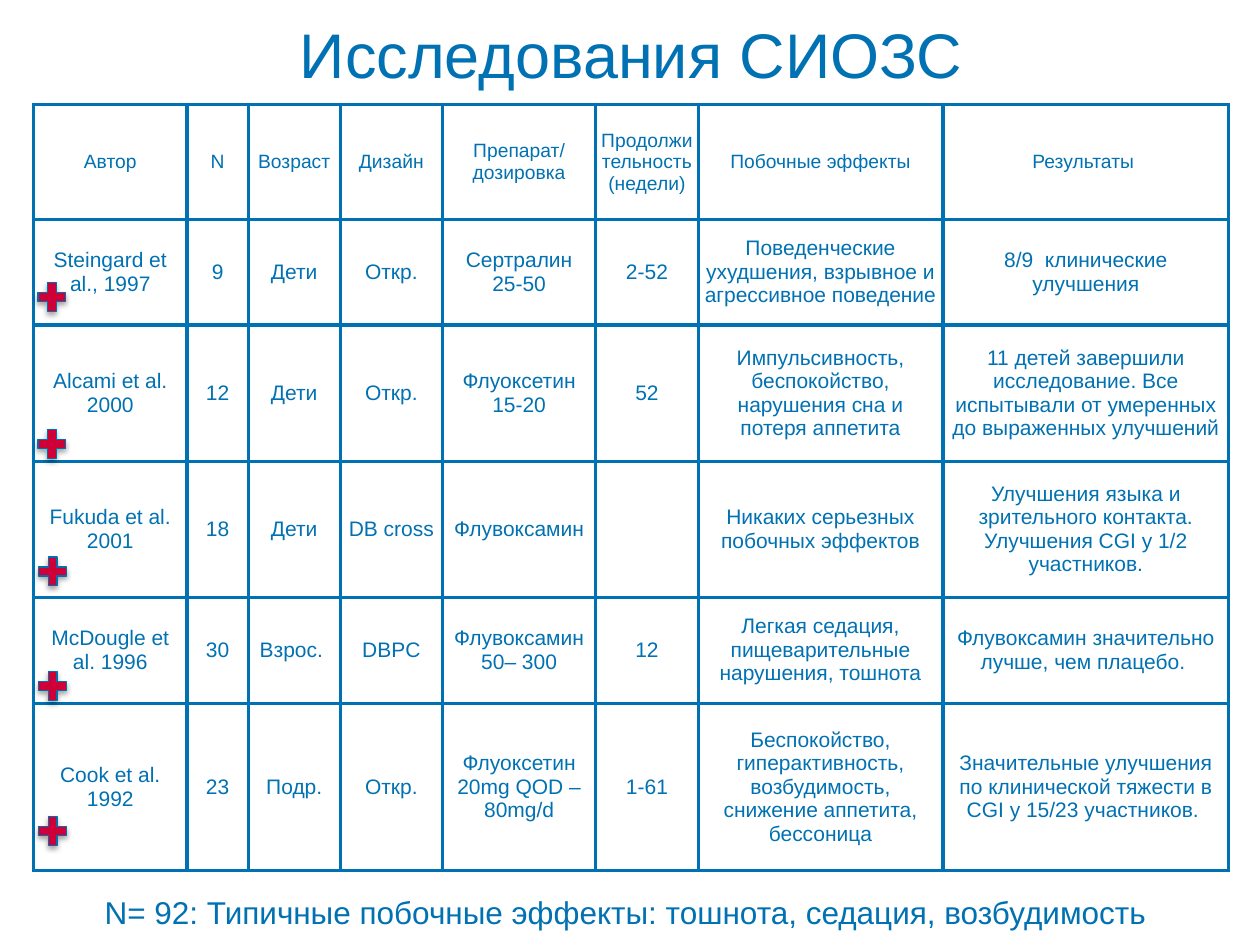
from lxml.etree import SubElement
from pptx import Presentation
from pptx.dml.color import RGBColor
from pptx.enum.shapes import MSO_SHAPE
from pptx.enum.text import MSO_ANCHOR, MSO_AUTO_SIZE, PP_ALIGN
from pptx.oxml import parse_xml
from pptx.oxml.ns import nsdecls, qn
from pptx.util import Pt

COLORS = {"blue": "0071B2", "outline": "006FAE", "red": "CE0037", "shadow": "000000"}
FONT = "Arial"

TITLE = "Исследования СИОЗС"
SUMMARY = "N= 92: Типичные побочные эффекты: тошнота, седация, возбудимость"
STUDIES = [
    ("Автор", "N", "Возраст", "Дизайн", "Препарат/\nдозировка",
     "Продолжительность\n(недели)", "Побочные эффекты", "Результаты "),
    ("Steingard et al., 1997", "9", "Дети", "Откр.", "Сертралин\n25-50", "2-52",
     "Поведенческие ухудшения, взрывное и агрессивное поведение",
     "8/9  клинические улучшения"),
    ("Alcami et al.\n2000", "12", "Дети", "Откр.", "Флуоксетин\n15-20", "52",
     "Импульсивность, беспокойство, нарушения сна и потеря аппетита",
     "11 детей завершили исследование. Все испытывали от умеренных "
     "до выраженных улучшений"),
    ("Fukuda et al. 2001", "18", "Дети", "DB cross", "Флувоксамин", "",
     "Никаких серьезных побочных эффектов",
     "Улучшения языка и зрительного контакта. Улучшения CGI у 1/2 участников."),
    ("McDougle et al. 1996", "30", "Взрос. ", "DBPC", "Флувоксамин\n50– 300", "12",
     "Легкая седация, пищеварительные нарушения, тошнота",
     "Флувоксамин значительно лучше, чем плацебо. "),
    ("Cook et al. 1992", "23", "Подр.", "Откр.", "Флуоксетин 20mg QOD – 80mg/d",
     "1-61",
     "Беспокойство, гиперактивность, возбудимость, снижение аппетита, бессоница",
     "Значительные улучшения по клинической тяжести в CGI у 15/23 участников. "),
]
COLUMN_WIDTHS = [87.7, 35, 52.6, 58.4, 87.7, 58.4, 140, 163.3]
ROW_HEIGHTS = [65.4, 60.5, 77.8, 77.8, 60.5, 95.8]
PLUS_POSITIONS = [(18.9, 158.5), (18.9, 242.6), (19.3, 315.4), (19.3, 380.9), (19.3, 463.7)]


def color(name):
    return RGBColor.from_string(COLORS[name])


def write(frame, text, size, align):
    for index, line in enumerate(text.split("\n")):
        paragraph = frame.add_paragraph() if index else frame.paragraphs[0]
        paragraph.alignment = align
        if line:
            run = paragraph.add_run()
            run.text = line
            run.font.size = Pt(size)
            run.font.name = FONT
            run.font.color.rgb = color("blue")


def set_borders(cell):
    properties = cell._tc.get_or_add_tcPr()
    for index, side in enumerate(("lnL", "lnR", "lnT", "lnB")):
        properties.insert(index, parse_xml(
            f'<a:{side} {nsdecls("a")} w="{Pt(2)}"><a:solidFill>'
            f'<a:srgbClr val="{COLORS["blue"]}"/></a:solidFill></a:{side}>'))


def add_study_table(slide):
    table = slide.shapes.add_table(
        len(STUDIES), len(COLUMN_WIDTHS), Pt(19.2), Pt(59.8),
        Pt(sum(COLUMN_WIDTHS)), Pt(sum(ROW_HEIGHTS))).table
    table.first_row = table.horz_banding = False
    for column, width in zip(table.columns, COLUMN_WIDTHS):
        column.width = Pt(width)
    for row_index, (row, height, study) in enumerate(zip(table.rows, ROW_HEIGHTS, STUDIES)):
        row.height = Pt(height)
        for cell, text in zip(row.cells, study):
            cell.fill.background()
            set_borders(cell)
            cell.vertical_anchor = MSO_ANCHOR.MIDDLE
            cell.margin_left = cell.margin_right = Pt(2.9)
            cell.margin_top = cell.margin_bottom = Pt(2.9)
            write(cell.text_frame, text, 12 if row_index else 11, PP_ALIGN.CENTER)


def add_plus(slide, left, top):
    plus = slide.shapes.add_shape(
        MSO_SHAPE.MATH_PLUS, Pt(left), Pt(top), Pt(21.6), Pt(22.3))
    plus.fill.solid()
    plus.fill.fore_color.rgb = color("red")
    plus.line.color.rgb = color("outline")
    plus.line.width = Pt(0.75)
    plus.shadow.inherit = False
    effects = plus._element.spPr.find(qn("a:effectLst"))
    shadow = SubElement(effects, qn("a:outerShdw"), blurRad=str(Pt(3.1)),
                        dist=str(Pt(1.8)), dir="5400000", rotWithShape="0")
    tint = SubElement(shadow, qn("a:srgbClr"), val=COLORS["shadow"])
    SubElement(tint, qn("a:alpha"), val="35000")


def main():
    deck = Presentation()
    deck.slide_width, deck.slide_height = Pt(720), Pt(540)
    slide = deck.slides.add_slide(deck.slide_layouts[5])

    title = slide.shapes.title
    title.left, title.top, title.width, title.height = Pt(0.7), Pt(0.7), Pt(720), Pt(59.8)
    title.text_frame.vertical_anchor = MSO_ANCHOR.MIDDLE
    write(title.text_frame, TITLE, 36, PP_ALIGN.CENTER)

    summary = slide.shapes.add_textbox(Pt(59.8), Pt(510.5), Pt(601.2), Pt(21.6)).text_frame
    summary.word_wrap = False
    summary.auto_size = MSO_AUTO_SIZE.SHAPE_TO_FIT_TEXT
    summary.vertical_anchor = MSO_ANCHOR.MIDDLE
    summary.margin_left = summary.margin_right = 0
    summary.margin_top = summary.margin_bottom = 0
    write(summary, SUMMARY, 18, PP_ALIGN.LEFT)

    add_study_table(slide)
    for left, top in PLUS_POSITIONS:
        add_plus(slide, left, top)

    deck.save("out.pptx")


if __name__ == "__main__":
    main()
